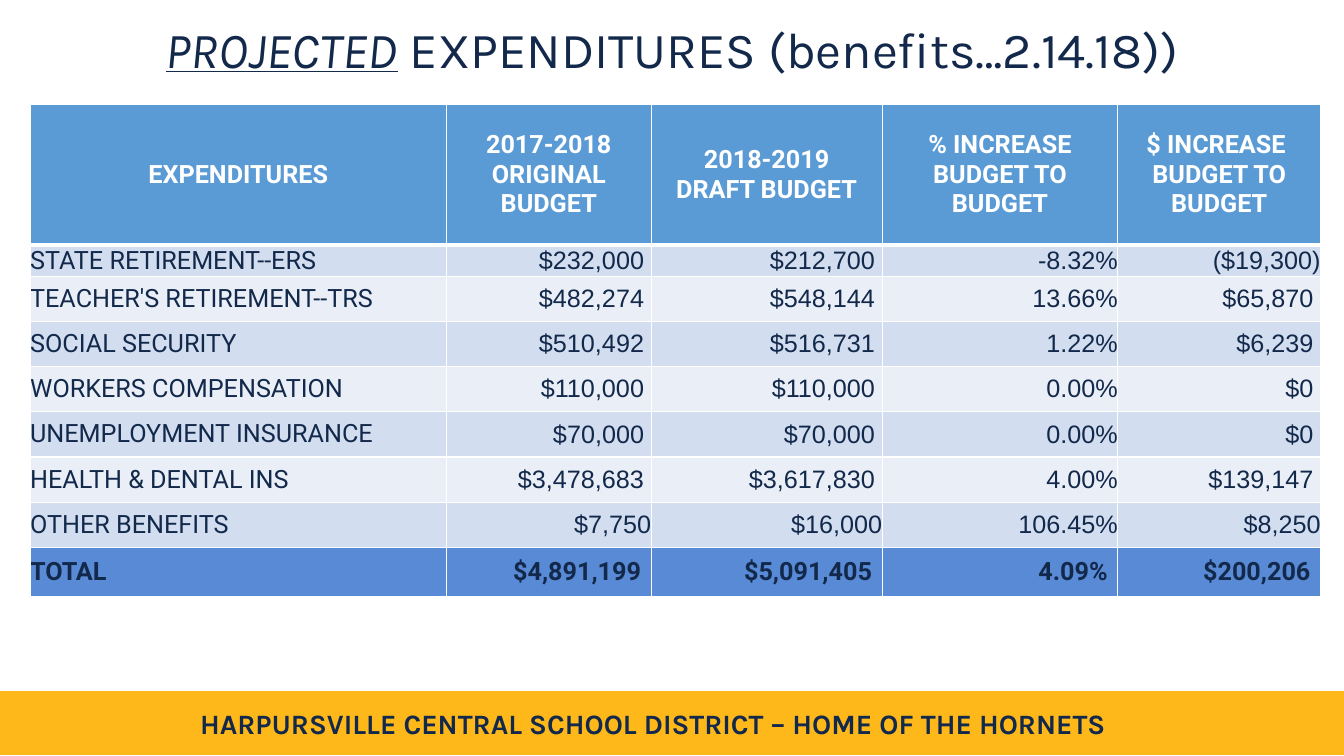
from lxml import etree
from pptx import Presentation
from pptx.dml.color import RGBColor
from pptx.enum import shapes, text
from pptx.oxml import ns
from pptx.util import Cm, Pt

WHITE = RGBColor(0xFF, 0xFF, 0xFF)
NAVY = RGBColor(0x13, 0x29, 0x4B)
GOLD = RGBColor(0xFF, 0xB8, 0x19)
BLUE = RGBColor(0x5B, 0x9B, 0xD5)
ROYAL = RGBColor(0x59, 0x8A, 0xD5)
BANDS = (RGBColor(0xD2, 0xDE, 0xEF), RGBColor(0xEA, 0xEF, 0xF7))

LEFT, MID, RIGHT = text.PP_ALIGN.LEFT, text.PP_ALIGN.CENTER, text.PP_ALIGN.RIGHT
COLS = (10.49, 5.16, 5.82, 5.94, 5.11)
ROWS = (3.53, 0.79, *[1.14] * 6, 1.24)
GAP = 0.18

HEADS = (
    "EXPENDITURES",
    "2017-2018\nORIGINAL BUDGET",
    "2018-2019\nDRAFT BUDGET",
    "% INCREASE BUDGET TO BUDGET",
    "$ INCREASE \nBUDGET TO BUDGET",
)
ITEMS = (
    ("STATE RETIREMENT--ERS", "$232,000", "$212,700", "-8.32%", "($19,300)"),
    ("TEACHER'S RETIREMENT--TRS", "$482,274", "$548,144", "13.66%", "$65,870"),
    ("SOCIAL SECURITY", "$510,492", "$516,731", "1.22%", "$6,239"),
    ("WORKERS COMPENSATION", "$110,000", "$110,000", "0.00%", "$0"),
    ("UNEMPLOYMENT INSURANCE", "$70,000", "$70,000", "0.00%", "$0"),
    ("HEALTH & DENTAL INS", "$3,478,683", "$3,617,830", "4.00%", "$139,147"),
    ("OTHER BENEFITS", "$7,750", "$16,000", "106.45%", "$8,250"),
)
TOTAL = ("TOTAL", "$4,891,199", "$5,091,405", "4.09%", "$200,206")
FLUSH = {(1, 4), (7, 1), (7, 2), (7, 4)}


def write(frame, runs, size=18, font="Roboto", color=NAVY, bold=False,
          align=LEFT, space=None):
    if isinstance(runs, str):
        lines = [[(line, False)] for line in runs.split("\n")]
    else:
        lines = [runs]
    for i, line in enumerate(lines):
        para = frame.add_paragraph() if i else frame.paragraphs[0]
        para.alignment = align
        if space:
            para.line_spacing = space
        for words, slant in line:
            run = para.add_run()
            run.text = words
            face = run.font
            face.size, face.name, face.bold = Pt(size), font, bold
            face.italic = face.underline = slant
            face.color.rgb = color


def add_title(slide):
    title = slide.shapes.title
    title.left, title.top, title.width, title.height = Cm(2.34), Cm(0), Cm(29.21), Cm(2.64)
    title.fill.solid()
    title.fill.fore_color.rgb = WHITE
    frame = title.text_frame
    frame.auto_size = text.MSO_AUTO_SIZE.NONE
    frame.vertical_anchor = text.MSO_ANCHOR.MIDDLE
    write(frame, [("PROJECTED", True), (" EXPENDITURES (benefits…2.14.18))", False)],
          size=36, font="Karla", align=MID, space=0.9)


def add_band(slide, width):
    band = slide.shapes.add_shape(shapes.MSO_SHAPE.RECTANGLE, 0, Cm(17.42), width, Cm(1.6))
    band.shadow.inherit = False
    band.fill.solid()
    band.fill.fore_color.rgb = GOLD
    band.line.color.rgb = GOLD
    band.line.width = Pt(1)
    box = slide.shapes.add_textbox(Cm(4.47), Cm(17.68), Cm(23.98), Cm(1.12))
    box.text_frame.word_wrap = True
    write(box.text_frame, "HARPURSVILLE CENTRAL SCHOOL DISTRICT – HOME OF THE HORNETS",
          size=20, font="Karla", bold=True, align=MID)


def edge(cell, side, width):
    props = cell._tc.get_or_add_tcPr()
    line = etree.SubElement(props, ns.qn("a:ln" + side), w=str(Pt(width)))
    fill = etree.SubElement(line, ns.qn("a:solidFill"))
    etree.SubElement(fill, ns.qn("a:srgbClr"), val=str(WHITE))


def fill_cell(cell, words, back, pads=None, base=1, top=1, **style):
    for side, width in (("L", 1), ("R", 1), ("T", top), ("B", base)):
        edge(cell, side, width)
    cell.fill.solid()
    cell.fill.fore_color.rgb = back
    cell.vertical_anchor = text.MSO_ANCHOR.MIDDLE
    if pads:
        cell.margin_left, cell.margin_right = Cm(pads[0]), Cm(pads[1])
        cell.margin_top = cell.margin_bottom = 0
    write(cell.text_frame, words, **style)


def add_grid(slide):
    grid = slide.shapes.add_table(len(ROWS), len(COLS), Cm(0.76), Cm(2.64),
                                  Cm(sum(COLS)), Cm(sum(ROWS))).table
    for col, width in zip(grid.columns, COLS):
        col.width = Cm(width)
    for row, height in zip(grid.rows, ROWS):
        row.height = Cm(height)
    for c, words in enumerate(HEADS):
        fill_cell(grid.cell(0, c), words, BLUE, base=3, color=WHITE, bold=True, align=MID)
    for r, item in enumerate(ITEMS, 1):
        for c, words in enumerate(item):
            pad = GAP if c in (1, 2, 4) and (r, c) not in FLUSH else 0
            fill_cell(grid.cell(r, c), words, BANDS[(r - 1) % 2], (0, pad),
                      top=3 if r == 1 else 1, font="Arial" if c else "Roboto",
                      align=RIGHT if c else LEFT)
    for c, words in enumerate(TOTAL):
        fill_cell(grid.cell(len(ROWS) - 1, c), words, ROYAL, None if c else (0, 0),
                  bold=True, align=RIGHT if c else LEFT)


def main():
    deck = Presentation()
    deck.slide_width, deck.slide_height = Cm(33.87), Cm(19.05)
    slide = deck.slides.add_slide(deck.slide_layouts[5])
    add_band(slide, deck.slide_width)
    add_title(slide)
    add_grid(slide)
    deck.save("out.pptx")


if __name__ == "__main__":
    main()
